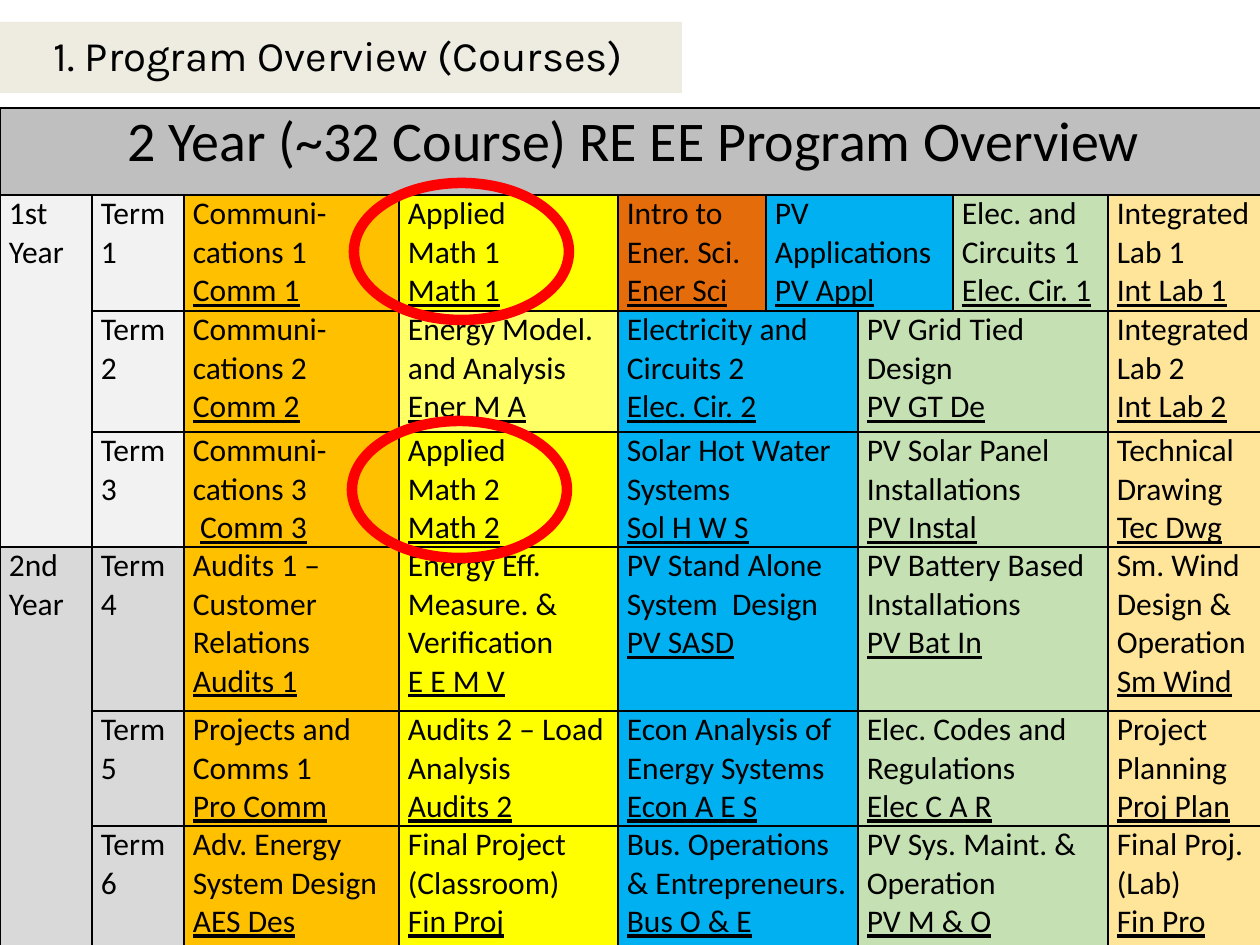
"""Build the program overview slide with its two-year course table."""
from dataclasses import dataclass

from lxml import etree
from pptx import Presentation
from pptx import util as u
from pptx.dml.color import RGBColor
from pptx.enum import shapes, text
from pptx.oxml import ns

PX = u.Inches(1) // 126
BLACK = RGBColor(0x00, 0x00, 0x00)
RED = RGBColor(0xFF, 0x00, 0x00)
CREAM = RGBColor(0xEE, 0xEC, 0xE1)
HEADING_GRAY = RGBColor(0xBF, 0xBF, 0xBF)
FIRST_YEAR_GRAY = RGBColor(0xF2, 0xF2, 0xF2)
SECOND_YEAR_GRAY = RGBColor(0xD9, 0xD9, 0xD9)
GOLD = RGBColor(0xFF, 0xC0, 0x00)
YELLOW = RGBColor(0xFF, 0xFF, 0x00)
PALE_YELLOW = RGBColor(0xFF, 0xFF, 0x66)
ORANGE = RGBColor(0xE4, 0x6C, 0x0A)
BLUE = RGBColor(0x00, 0xB0, 0xF0)
GREEN = RGBColor(0xC5, 0xE0, 0xB3)
SAND = RGBColor(0xFF, 0xE5, 0x99)

COLUMN_WIDTHS = (92, 92, 215, 219, 148, 92, 95, 155, 160)
ROW_HEIGHTS = (87, 116, 121, 115, 164, 115, 125)
TERMS_PER_YEAR = 3


@dataclass(frozen=True)
class Box:
    left: int
    top: int
    width: int
    height: int

    def emu(self) -> tuple[int, int, int, int]:
        return self.left * PX, self.top * PX, self.width * PX, self.height * PX


@dataclass(frozen=True)
class Slot:
    column: int
    span: int
    fill: RGBColor


@dataclass(frozen=True)
class Course:
    """A course name and its code; a name ending in a space shares its last paragraph with the code."""
    name: str
    code: str


SLOTS = (Slot(2, 1, GOLD), Slot(3, 1, YELLOW), Slot(4, 2, BLUE), Slot(6, 2, GREEN), Slot(8, 1, SAND))
TERM_1_SLOTS = (*SLOTS[:2], Slot(4, 1, ORANGE), Slot(5, 2, BLUE), Slot(7, 1, GREEN), SLOTS[4])
TERM_2_SLOTS = (SLOTS[0], Slot(3, 1, PALE_YELLOW), *SLOTS[2:])
TERMS = (
    (TERM_1_SLOTS, (
        Course("Communi- cations 1 ", "Comm 1"),
        Course("Applied\nMath 1", "Math 1"),
        Course("Intro to Ener. Sci. ", "Ener Sci"),
        Course("PV Applications", "PV Appl"),
        Course("Elec. and Circuits 1 ", "Elec. Cir. 1"),
        Course("Integrated Lab 1", "Int Lab 1"))),
    (TERM_2_SLOTS, (
        Course("Communi-cations 2 ", "Comm 2"),
        Course("Energy Model. and Analysis", "Ener M A"),
        Course("Electricity and Circuits 2", "Elec. Cir. 2"),
        Course("PV Grid Tied Design", "PV GT De"),
        Course("Integrated Lab 2", "Int Lab 2"))),
    (SLOTS, (
        Course("Communi-\ncations 3\n ", "Comm 3"),
        Course("Applied\nMath 2", "Math 2"),
        Course("Solar Hot Water Systems", "Sol H W S"),
        Course("PV Solar Panel Installations", "PV Instal"),
        Course("Technical Drawing ", "Tec Dwg"))),
    (SLOTS, (
        Course("Audits 1 – Customer Relations", "Audits 1"),
        Course("Energy Eff. Measure. & Verification", "E E M V"),
        Course("PV Stand Alone System  Design", "PV SASD"),
        Course("PV Battery Based Installations", "PV Bat In"),
        Course("Sm. Wind Design & Operation", "Sm Wind"))),
    (SLOTS, (
        Course("Projects and Comms 1", "Pro Comm"),
        Course("Audits 2 – Load Analysis", "Audits 2"),
        Course("Econ Analysis of Energy Systems", "Econ A E S"),
        Course("Elec. Codes and Regulations", "Elec C A R"),
        Course("Project Planning", "Proj Plan"))),
    (SLOTS, (
        Course("Adv. Energy System Design", "AES Des"),
        Course("Final Project\n(Classroom)", "Fin Proj"),
        Course("Bus. Operations & Entrepreneurs. ", "Bus O & E"),
        Course("PV Sys. Maint. & Operation", "PV M & O"),
        Course("Final Proj. (Lab)", "Fin Pro"))),
)
CIRCLES = (Box(354, 183, 215, 137), Box(352, 421, 215, 137))


def add_run(paragraph, words: str, size: int = 18, font: str = "Calibri", underline: bool = False) -> None:
    run = paragraph.add_run()
    run.text = words
    run.font.size = u.Pt(size)
    run.font.name = font
    run.font.color.rgb = BLACK
    if underline:
        run.font.underline = True


def add_borders(cell) -> None:
    properties = cell._tc.get_or_add_tcPr()
    for side in ("lnL", "lnR", "lnT", "lnB"):
        line = etree.SubElement(properties, ns.qn(f"a:{side}"), w=str(u.Pt(1)))
        solid = etree.SubElement(line, ns.qn("a:solidFill"))
        etree.SubElement(solid, ns.qn("a:srgbClr"), val=str(BLACK))


def open_cell(table, row: int, column: int, fill: RGBColor, rows: int = 1, columns: int = 1):
    cell = table.cell(row, column)
    if rows * columns > 1:
        cell.merge(table.cell(row + rows - 1, column + columns - 1))
    cell.fill.solid()
    cell.fill.fore_color.rgb = fill
    cell.margin_left = cell.margin_right = 9 * PX
    cell.margin_top = cell.margin_bottom = 0
    return cell.text_frame


def write_course(frame, course: Course) -> None:
    paragraph = frame.paragraphs[0]
    for index, words in enumerate(course.name.split("\n")):
        if index:
            paragraph = frame.add_paragraph()
        add_run(paragraph, words)
    if not course.name.endswith(" "):
        paragraph = frame.add_paragraph()
    add_run(paragraph, course.code, underline=True)


def add_course_table(slide) -> None:
    box = Box(0, 108, sum(COLUMN_WIDTHS), sum(ROW_HEIGHTS))
    table = slide.shapes.add_table(len(ROW_HEIGHTS), len(COLUMN_WIDTHS), *box.emu()).table
    table.first_row = table.horz_banding = False
    for column, width in zip(table.columns, COLUMN_WIDTHS):
        column.width = width * PX
    for row, height in zip(table.rows, ROW_HEIGHTS):
        row.height = height * PX
    for cell in table.iter_cells():
        add_borders(cell)

    heading = open_cell(table, 0, 0, HEADING_GRAY, columns=len(COLUMN_WIDTHS)).paragraphs[0]
    heading.alignment = text.PP_ALIGN.CENTER
    add_run(heading, "2 Year (~32 Course) RE EE Program Overview", 32)

    years = (("1st Year", FIRST_YEAR_GRAY), ("2nd Year", SECOND_YEAR_GRAY))
    for index, (year, fill) in enumerate(years):
        frame = open_cell(table, 1 + index * TERMS_PER_YEAR, 0, fill, rows=TERMS_PER_YEAR)
        add_run(frame.paragraphs[0], year)

    for term, (slots, courses) in enumerate(TERMS, start=1):
        fill = years[(term - 1) // TERMS_PER_YEAR][1]
        add_run(open_cell(table, term, 1, fill).paragraphs[0], f"Term {term}")
        for slot, course in zip(slots, courses):
            write_course(open_cell(table, term, slot.column, slot.fill, columns=slot.span), course)


def add_title(slide) -> None:
    band = slide.shapes.add_shape(shapes.MSO_SHAPE.RECTANGLE, *Box(0, 22, 682, 71).emu())
    band.shadow.inherit = False
    band.fill.solid()
    band.fill.fore_color.rgb = CREAM
    band.line.fill.background()
    frame = slide.shapes.add_textbox(*Box(13, 8, 673, 93).emu()).text_frame
    frame.word_wrap = True
    frame.vertical_anchor = text.MSO_ANCHOR.MIDDLE
    frame.margin_right = 35 * PX
    frame.paragraphs[0].alignment = text.PP_ALIGN.CENTER
    add_run(frame.paragraphs[0], "1. Program Overview (Courses)", 24, "Karla")


def add_circle(slide, box: Box) -> None:
    circle = slide.shapes.add_shape(shapes.MSO_SHAPE.OVAL, *box.emu())
    circle.shadow.inherit = False
    circle.fill.background()
    circle.line.color.rgb = RED
    circle.line.width = u.Pt(6)


def main() -> None:
    presentation = Presentation()
    presentation.slide_width = u.Inches(10)
    presentation.slide_height = u.Inches(7.5)
    slide = presentation.slides.add_slide(presentation.slide_layouts[6])
    add_title(slide)
    add_course_table(slide)
    for box in CIRCLES:
        add_circle(slide, box)
    presentation.save("out.pptx")


if __name__ == "__main__":
    main()
